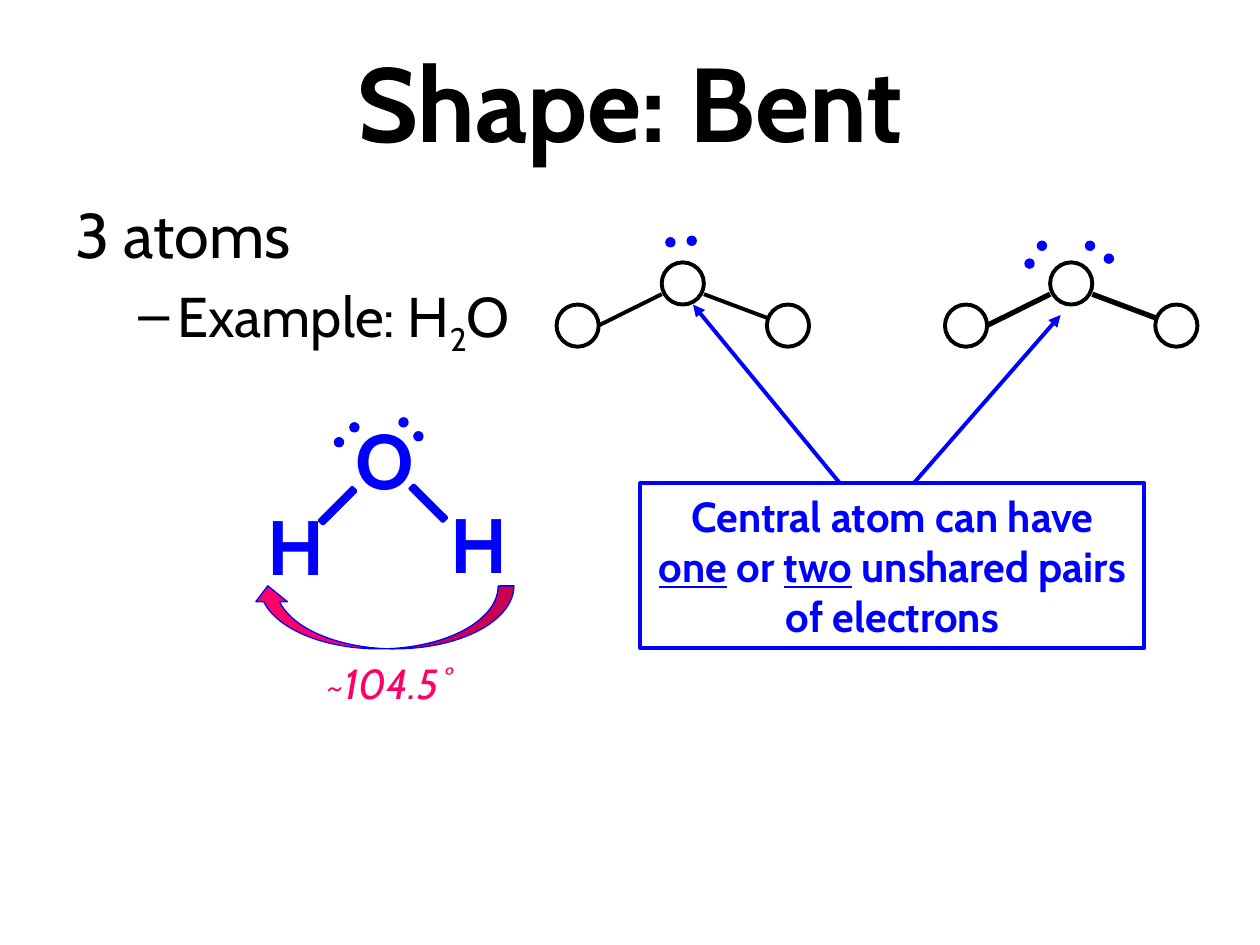
import pptx
import pptx.dml.color
import pptx.enum.shapes
import pptx.enum.text
import pptx.oxml
import pptx.util
from dataclasses import dataclass
from lxml import etree

Cm, Pt = pptx.util.Cm, pptx.util.Pt
RGB = pptx.dml.color.RGBColor.from_string
SHAPE = pptx.enum.shapes.MSO_SHAPE
CENTER = pptx.enum.text.PP_ALIGN.CENTER
MIDDLE = pptx.enum.text.MSO_ANCHOR.MIDDLE
qn = pptx.oxml.ns.qn


@dataclass(frozen=True)
class Theme:
    font: str = "Cabin"
    black: str = "000000"
    white: str = "FFFFFF"
    blue: str = "0000FF"
    pink: str = "FF0066"
    title: int = 60
    body: int = 36
    example: int = 32
    symbol: int = 44
    label: int = 24


theme = Theme()

prs = pptx.Presentation()
prs.slide_width, prs.slide_height = Cm(25.4), Cm(19.05)
slide = prs.slides.add_slide(prs.slide_layouts[5])
shapes = slide.shapes


def style(p, size, color, bold=False, italic=False):
    f = p.font
    f.name, f.size, f.bold, f.italic = theme.font, Pt(size), bold, italic
    f.color.rgb = RGB(color)


def add_line(x1, y1, x2, y2, color, width, arrow=False):
    line = shapes.add_connector(pptx.enum.shapes.MSO_CONNECTOR.STRAIGHT,
                                Cm(x1), Cm(y1), Cm(x2), Cm(y2))
    line.line.color.rgb = RGB(color)
    line.line.width = Pt(width)
    if arrow:
        etree.SubElement(line.line._get_or_add_ln(), qn("a:tailEnd"), type="triangle")
    etree.SubElement(line._element.spPr, qn("a:effectLst"))


# Title
sp = shapes.title
sp.left, sp.top, sp.width, sp.height = Cm(1.27), Cm(0.43), Cm(22.86), Cm(3.18)
tf = sp.text_frame
tf.text = "Shape: Bent"
tf.vertical_anchor = MIDDLE
tf.paragraphs[0].alignment = CENTER
style(tf.paragraphs[0], theme.title, theme.black, bold=True)

# Body text
tf = shapes.add_textbox(Cm(1.27), Cm(3.81), Cm(22.86), Cm(12.57)).text_frame
tf.word_wrap = True
p = tf.paragraphs[0]
p.text = "3 atoms"
style(p, theme.body, theme.black)
p = tf.add_paragraph()
p.level = 1
p.space_before = Pt(6.4)
style(p, theme.example, theme.black)
for text in ("Example: H", "2", "O"):
    r = p.add_run()
    r.text = text
    if text == "2":
        r.font._element.set("baseline", "-25000")
pPr = p._p.get_or_add_pPr()
pPr.set("marL", str(Cm(2.06)))
pPr.set("indent", str(Cm(-0.79)))
bullet = etree.Element(qn("a:buChar"), char="–")
pPr.find(qn("a:defRPr")).addprevious(bullet)

# Two bent molecules: bonds first, then the atoms over their ends
atom, step = 0.85, 2.12
for left, bond_width in ((11.22, 2.25), (19.05, 3)):
    add_line(left + atom, 6.56, left + step, 5.93, theme.black, bond_width)
    add_line(left + step + atom, 5.93, left + 4.65, 6.56, theme.black, bond_width)
    for i, top in enumerate((6.14, 5.29, 6.14)):
        sp = shapes.add_shape(SHAPE.OVAL, Cm(left + i * step), Cm(top), Cm(atom), Cm(atom))
        sp.shadow.inherit = False
        sp.fill.solid()
        sp.fill.fore_color.rgb = RGB(theme.white)
        sp.line.color.rgb = RGB(theme.black)
        sp.line.width = Pt(2.25)

# Note on the central atom
sp = shapes.add_shape(SHAPE.RECTANGLE, Cm(12.91), Cm(9.74), Cm(10.16), Cm(3.33))
sp.shadow.inherit = False
sp.fill.background()
sp.line.color.rgb = RGB(theme.blue)
sp.line.width = Pt(2.25)
tf = sp.text_frame
tf.word_wrap = True
tf.vertical_anchor = MIDDLE
p = tf.paragraphs[0]
p.alignment = CENTER
style(p, theme.label, theme.blue, bold=True)
for text in ("Central atom can have ", "one", " or ", "two", " unshared pairs of electrons"):
    r = p.add_run()
    r.text = text
    r.font.underline = text in ("one", "two")

add_line(18.42, 9.74, 21.38, 6.35, theme.blue, 2.25, arrow=True)
add_line(16.93, 9.74, 13.97, 6.14, theme.blue, 2.25, arrow=True)

# Water molecule: symbols and bonds
for text, left, top in (("O", 6.58, 8.2), ("H", 8.48, 9.88), ("H", 4.8, 9.93)):
    tf = shapes.add_textbox(Cm(left), Cm(top), Cm(2.34), Cm(2.13)).text_frame
    tf.word_wrap = True
    p = tf.paragraphs[0]
    p.text = text
    p.alignment = CENTER
    style(p, theme.symbol, theme.blue, bold=True)

for left, top, angle in ((8, 9.93, 45), (6.17, 9.98, 135)):
    sp = shapes.add_shape(SHAPE.MATH_MINUS, Cm(left), Cm(top), Cm(1.27), Cm(0.43))
    sp.rotation = angle
    sp.shadow.inherit = False
    sp.fill.solid()
    sp.fill.fore_color.rgb = RGB(theme.blue)
    sp.line.color.rgb = RGB(theme.blue)
    sp.line.width = Pt(2)

# Unshared electrons of all three molecules
electrons = (
    (6.73, 8.81), (7.04, 8.51), (8.03, 8.41), (8.33, 8.69),
    (20.65, 5.21), (20.9, 4.85), (21.87, 4.85), (22.25, 5.11),
    (13.41, 4.78), (13.84, 4.75),
)
for left, top in electrons:
    sp = shapes.add_shape(SHAPE.OVAL, Cm(left), Cm(top), Cm(0.21), Cm(0.21))
    sp.shadow.inherit = False
    sp.fill.solid()
    sp.fill.fore_color.rgb = RGB(theme.blue)
    sp.line.fill.background()

# Bond angle
sp = shapes.add_shape(SHAPE.CURVED_DOWN_ARROW, Cm(5.08), Cm(11.81), Cm(5.28), Cm(1.27))
sp.rotation = 180
sp.shadow.inherit = False
sp.fill.solid()
sp.fill.fore_color.rgb = RGB(theme.pink)
sp.line.color.rgb = RGB(theme.blue)
sp.line.width = Pt(0.75)

tf = shapes.add_textbox(Cm(5.92), Cm(13.13), Cm(3.81), Cm(1.3)).text_frame
tf.word_wrap = True
p = tf.paragraphs[0]
p.text = "~104.5˚"
p.alignment = CENTER
style(p, theme.label, theme.pink, italic=True)

prs.save("out.pptx")
